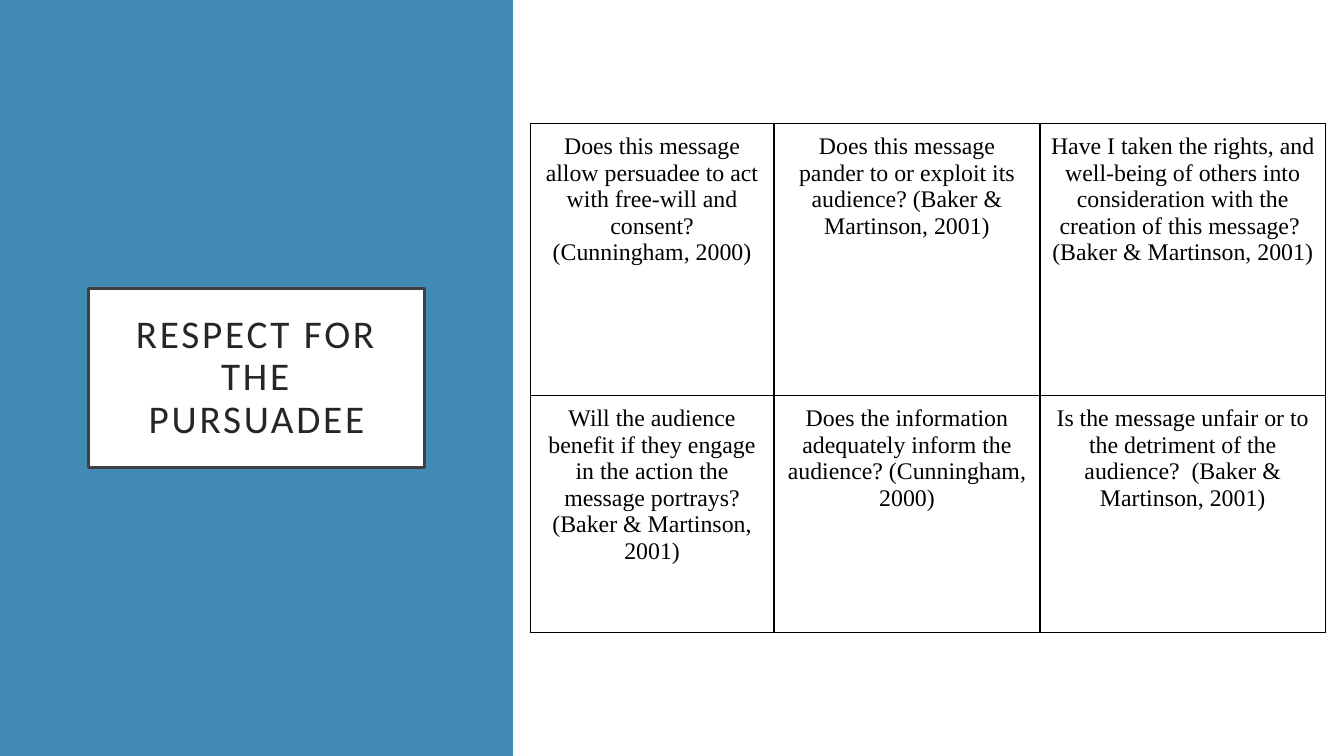
from lxml.etree import SubElement
from pptx import Presentation
from pptx.dml.color import RGBColor
from pptx.enum.shapes import MSO_SHAPE as Shape
from pptx.enum.text import MSO_ANCHOR as Anchor, PP_ALIGN as Align
from pptx.oxml.ns import qn
from pptx.util import Pt

COLORS = {
    "blue": "418AB3",
    "white": "FFFFFF",
    "frame": "404040",
    "title": "262626",
    "black": "000000",
}


def color(name):
    return RGBColor.from_string(COLORS[name])


def write_text(frame, text, font, size, ink, line_spacing=1.0, tracking=0):
    frame.word_wrap = True
    paragraph = frame.paragraphs[0]
    paragraph.alignment = Align.CENTER
    paragraph.line_spacing = line_spacing
    run = paragraph.add_run()
    run.text = text
    run.font.name = font
    run.font.size = Pt(size)
    run.font.color.rgb = color(ink)
    if tracking:
        run.font._element.set("spc", str(tracking * 100))


presentation = Presentation()
presentation.slide_width = Pt(960)
presentation.slide_height = Pt(540)
slide = presentation.slides.add_slide(presentation.slide_layouts[6])
slide.background.fill.solid()
slide.background.fill.fore_color.rgb = color("blue")

# Framed title
title = slide.shapes.add_shape(Shape.RECTANGLE, Pt(63.4), Pt(206), Pt(239.8), Pt(128))
title.shadow.inherit = False
title.fill.solid()
title.fill.fore_color.rgb = color("white")
title.line.color.rgb = color("frame")
title.line.width = Pt(2.5)
title_frame = title.text_frame
title_frame.vertical_anchor = Anchor.MIDDLE
title_frame.margin_left = title_frame.margin_right = Pt(21.6)
title_frame.margin_top = title_frame.margin_bottom = Pt(14.4)
write_text(title_frame, "RESPECT FOR THE PURSUADEE", font="Calibri", size=28,
           ink="title", line_spacing=0.9, tracking=2)

# White panel behind the table
panel = slide.shapes.add_shape(Shape.RECTANGLE, Pt(366.5), 0, Pt(593.5), Pt(540))
panel.shadow.inherit = False
panel.fill.solid()
panel.fill.fore_color.rgb = color("white")
panel.line.fill.background()

# Table of questions
questions = [
    [
        "Does this message allow persuadee to act with free-will and consent? (Cunningham, 2000)",
        "Does this message pander to or exploit its audience? (Baker & Martinson, 2001)",
        "Have I taken the rights, and well-being of others into consideration "
        "with the creation of this message?  (Baker & Martinson, 2001)",
    ],
    [
        "Will the audience benefit if they engage in the action the message portrays? "
        "(Baker & Martinson, 2001)",
        "Does the information adequately inform the audience? (Cunningham, 2000)",
        "Is the message unfair or to the detriment of the audience?  (Baker & Martinson, 2001)",
    ],
]
column_widths = [174.2, 190, 204]
row_heights = [194.4, 169.2]

table = slide.shapes.add_table(
    len(row_heights), len(column_widths), Pt(378.7), Pt(88),
    Pt(sum(column_widths)), Pt(sum(row_heights))).table
table.first_row = False
table.horz_banding = False
for column, width in zip(table.columns, column_widths):
    column.width = Pt(width)
for row, height, texts in zip(table.rows, row_heights, questions):
    row.height = Pt(height)
    for cell, text in zip(row.cells, texts):
        cell.margin_left = cell.margin_right = Pt(7.2)
        cell.margin_top = cell.margin_bottom = Pt(7.2)
        write_text(cell.text_frame, text, font="Times New Roman", size=17, ink="black")
        # Borders come before the fill in the cell properties
        properties = cell._tc.get_or_add_tcPr()
        for side in ("a:lnL", "a:lnR", "a:lnT", "a:lnB"):
            border = SubElement(properties, qn(side), w=str(Pt(1)))
            border_fill = SubElement(border, qn("a:solidFill"))
            SubElement(border_fill, qn("a:srgbClr"), val=COLORS["black"])
        cell.fill.background()

presentation.save("out.pptx")
